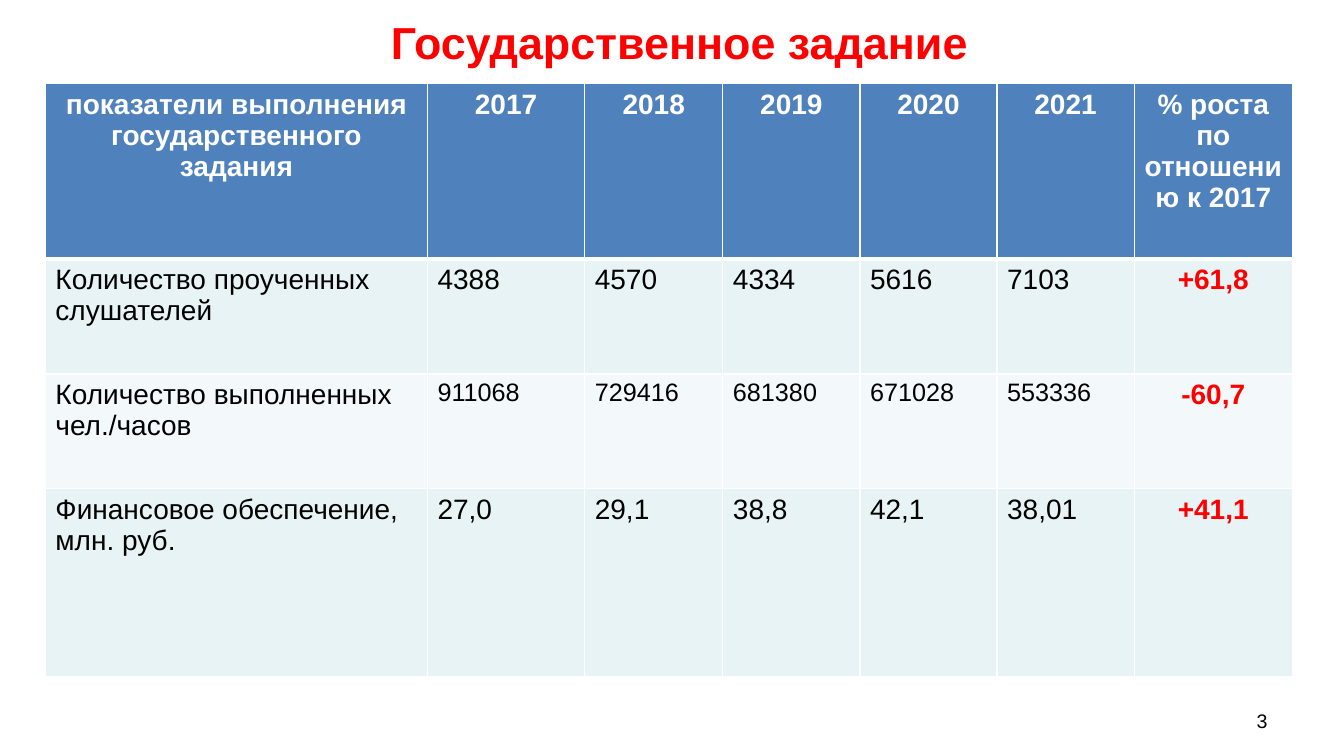
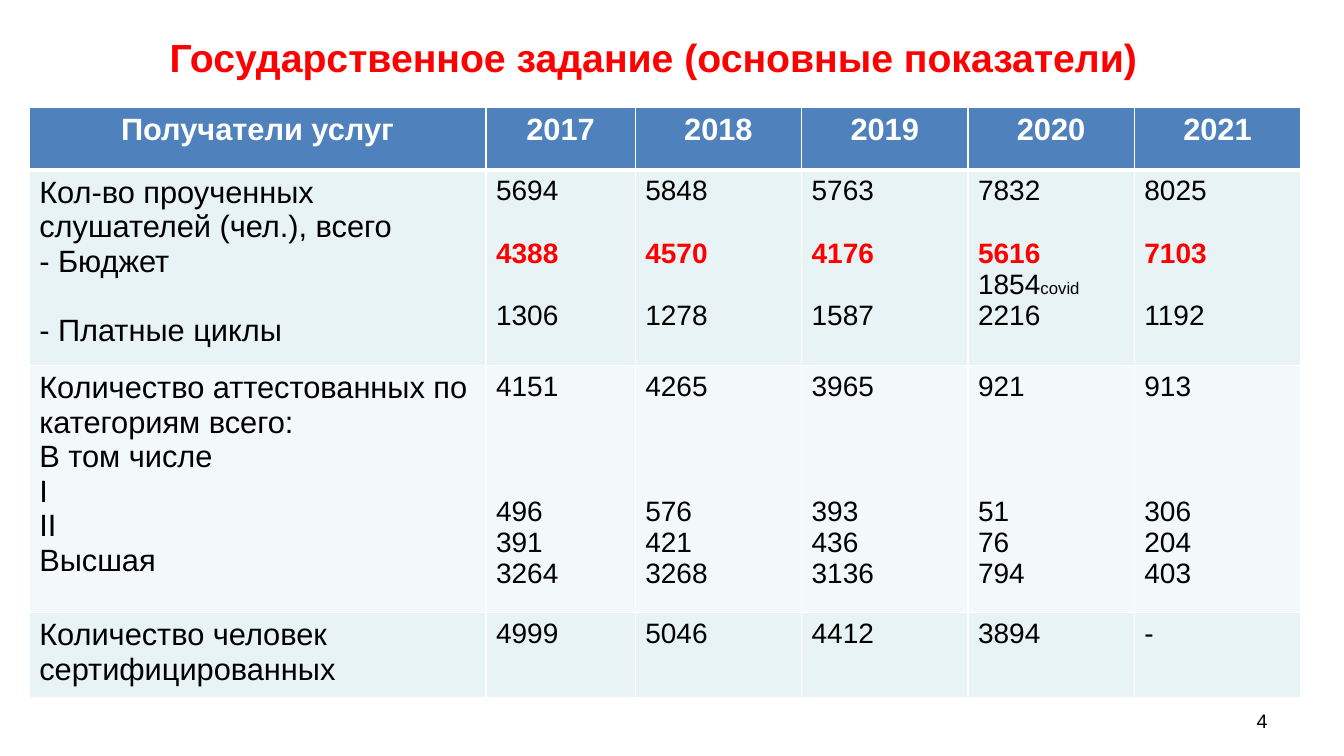
from dataclasses import dataclass

from lxml.etree import SubElement
from pptx import Presentation
from pptx.dml.color import RGBColor
from pptx.enum.text import MSO_ANCHOR, PP_ALIGN
from pptx.oxml.ns import qn
from pptx.util import Inches, Pt

FONT = "Arial"
RED = RGBColor(0xFF, 0x00, 0x00)
BLACK = RGBColor(0x00, 0x00, 0x00)
WHITE = RGBColor(0xFF, 0xFF, 0xFF)
BLUE = RGBColor(0x4F, 0x81, 0xBD)
BANDS = (RGBColor(0xE7, 0xF3, 0xF4), RGBColor(0xF3, 0xF9, 0xFA))
LEAD = 1.117  # line height of the font, per point of size
YEARS = ["2017", "2018", "2019", "2020", "2021"]


@dataclass(frozen=True)
class Line:
    text: str
    size: int = 20
    color: RGBColor = BLACK
    bold: bool = False
    center: bool = False
    skip: int = 0  # empty lines above
    tail: str = ""  # small text after the value


Cell = list[Line]


@dataclass(frozen=True)
class Grid:
    left: float
    top: float
    cols: list[float]
    rows: list[float]
    cells: list[list[Cell]]


@dataclass(frozen=True)
class Page:
    title: str
    size: int
    box: tuple[float, float, float, float]
    grid: Grid
    number: str


# Kinds of cells
def head(texts: list[str], size: int) -> list[Cell]:
    return [[Line(text, size, WHITE, True, True)] for text in texts]


def plain(texts: list[str], size: int = 20) -> list[Cell]:
    return [[Line(text, size)] for text in texts]


def growth(text: str) -> Cell:
    return [Line(text, color=RED, bold=True, center=True)]


def taught(total: str, budget: str, paid: str, covid: str = "") -> Cell:
    first = [Line(total), Line(budget, color=RED, bold=True, skip=1)]
    if covid:
        return first + [Line(covid, tail="covid"), Line(paid)]
    return first + [Line(paid, skip=1)]


def graded(total: str, one: str, two: str, top: str) -> Cell:
    return [Line(total), Line(one, skip=3), Line(two), Line(top)]


# Drawing
def write(frame, lines: Cell) -> None:
    for i, line in enumerate(lines):
        para = frame.paragraphs[0] if i == 0 else frame.add_paragraph()
        para.alignment = PP_ALIGN.CENTER if line.center else PP_ALIGN.LEFT
        if line.skip:
            para.space_before = Pt(round(line.skip * line.size * LEAD, 1))
        font = para.font
        font.name, font.size, font.bold = FONT, Pt(line.size), line.bold
        font.color.rgb = line.color
        para.add_run().text = line.text
        if line.tail:
            tail = para.add_run()
            tail.text = line.tail
            tail.font.size = Pt(12)


def add_text(slide, box: tuple[float, float, float, float], line: Line):
    frame = slide.shapes.add_textbox(*map(Inches, box)).text_frame
    frame.word_wrap = True
    frame.vertical_anchor = MSO_ANCHOR.MIDDLE
    write(frame, [line])
    return frame.paragraphs[0]


def edge(cell, row: int) -> None:
    props = cell._tc.get_or_add_tcPr()
    thick = {(0, "lnB"), (1, "lnT")}
    for side in ("lnL", "lnR", "lnT", "lnB"):
        width = Pt(3 if (row, side) in thick else 1)
        rule = SubElement(props, qn(f"a:{side}"), w=str(width))
        fill = SubElement(rule, qn("a:solidFill"))
        SubElement(fill, qn("a:srgbClr"), val=str(WHITE))


def add_grid(slide, grid: Grid) -> None:
    table = slide.shapes.add_table(
        len(grid.rows), len(grid.cols), Inches(grid.left), Inches(grid.top),
        Inches(sum(grid.cols)), Inches(sum(grid.rows))).table
    for col, width in zip(table.columns, grid.cols):
        col.width = Inches(width)
    for r, (height, cells) in enumerate(zip(grid.rows, grid.cells)):
        table.rows[r].height = Inches(height)
        for c, lines in enumerate(cells):
            cell = table.cell(r, c)
            edge(cell, r)
            cell.fill.solid()
            cell.fill.fore_color.rgb = BLUE if r == 0 else BANDS[(r - 1) % 2]
            write(cell.text_frame, lines)


def add_page(deck, page: Page) -> None:
    slide = deck.slides.add_slide(deck.slide_layouts[6])
    add_text(slide, page.box, Line(page.title, page.size, RED, True, True))
    add_grid(slide, page.grid)
    number = add_text(slide, (9.56, 6.95, 3.11, 0.4), Line(page.number, 14))
    number.alignment = PP_ALIGN.RIGHT


# Contents
TASK = Grid(
    0.45, 0.83, [3.79, 1.56, 1.37, 1.36, 1.36, 1.36, 1.57],
    [1.74, 1.14, 1.14, 1.86],
    [
        head(["показатели выполнения государственного задания", *YEARS,
              "% роста по отношению к 2017"], 20),
        plain(["Количество проученных слушателей",
               "4388", "4570", "4334", "5616", "7103"]) + [growth("+61,8")],
        plain(["Количество выполненных чел./часов"])
        + plain(["911068", "729416", "681380", "671028", "553336"], 18)
        + [growth("-60,7")],
        plain(["Финансовое обеспечение, млн. руб.",
               "27,0", "29,1", "38,8", "42,1", "38,01"]) + [growth("+41,1")],
    ])

MAIN = Grid(
    0.29, 1.07, [4.53, 1.48] + [1.65] * 4, [0.62, 1.94, 2.45, 0.84],
    [
        head(["Получатели услуг", *YEARS], 22),
        [
            [Line("Кол-во проученных слушателей (чел.), всего", 22),
             Line("- Бюджет", 22), Line("- Платные циклы", 22, skip=1)],
            taught("5694", "4388", "1306"),
            taught("5848", "4570", "1278"),
            taught("5763", "4176", "1587"),
            taught("7832", "5616", "2216", "1854"),
            taught("8025", "7103", "1192"),
        ],
        [
            [Line(text, 22) for text in (
                "Количество аттестованных по категориям всего:",
                "В том числе", "I", "II", "Высшая")],
            graded("4151", "496", "391", "3264"),
            graded("4265", "576", "421", "3268"),
            graded("3965", "393", "436", "3136"),
            graded("921", "51", "76", "794"),
            graded("913", "306", "204", "403"),
        ],
        plain(["Количество человек сертифицированных"], 22)
        + plain(["4999", "5046", "4412", "3894", "-"]),
    ])

PAGES = [
    Page("Государственное задание", 32, (1.93, 0.15, 9.62, 0.53), TASK, "3"),
    Page("Государственное задание (основные показатели)", 28,
         (0.29, 0.21, 12.38, 0.71), MAIN, "4"),
]


def main() -> None:
    deck = Presentation()
    deck.slide_width, deck.slide_height = Inches(13.33), Inches(7.5)
    for page in PAGES:
        add_page(deck, page)
    deck.save("out.pptx")


if __name__ == "__main__":
    main()
